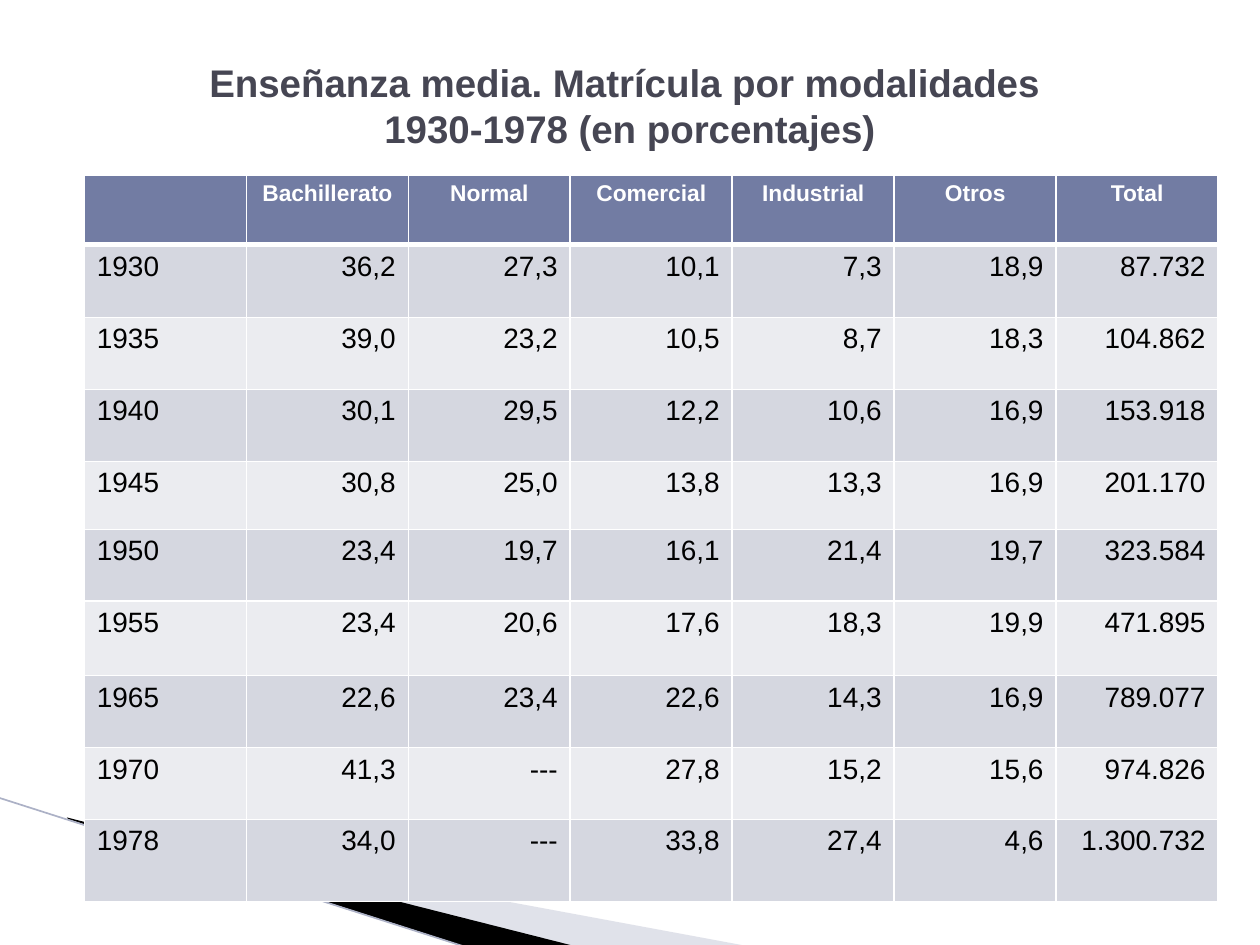
import copy
from dataclasses import dataclass

import pptx
import pptx.dml.color
import pptx.enum.shapes
import pptx.enum.text
import pptx.oxml
import pptx.oxml.ns
import pptx.util
from pptx.util import Cm

ALIGN = pptx.enum.text.PP_ALIGN
qn = pptx.oxml.ns.qn


@dataclass(frozen=True)
class Theme:
    font: str = "Arial"
    title: str = "464653"
    header: str = "727CA3"
    bands: tuple = ("D5D7E0", "EBECF0")
    white: str = "FFFFFF"
    black: str = "000000"
    ribbon: str = "B3B7CB"
    edge: str = "ACB1C6"
    title_size: int = 22
    header_size: int = 13
    body_size: int = 16


T = Theme()

HEADERS = ["", "Bachillerato", "Normal", "Comercial", "Industrial", "Otros", "Total"]
ENROLMENT = [
    ["1930", "36,2", "27,3", "10,1", "7,3", "18,9", "87.732"],
    ["1935", "39,0", "23,2", "10,5", "8,7", "18,3", "104.862"],
    ["1940", "30,1", "29,5", "12,2", "10,6", "16,9", "153.918"],
    ["1945", "30,8", "25,0", "13,8", "13,3", "16,9", "201.170"],
    ["1950", "23,4", "19,7", "16,1", "21,4", "19,7", "323.584"],
    ["1955", "23,4", "20,6", "17,6", "18,3", "19,9", "471.895"],
    ["1965", "22,6", "23,4", "22,6", "14,3", "16,9", "789.077"],
    ["1970", "41,3", "---", "27,8", "15,2", "15,6", "974.826"],
    ["1978", "34,0", "---", "33,8", "27,4", "4,6", "1.300.732"],
]
ROW_HEIGHTS = [1.4, 1.47, 1.45, 1.45, 1.37, 1.45, 1.5, 1.45, 1.45, 1.65]


def rgb(color):
    return pptx.dml.color.RGBColor.from_string(color)


def set_text(tf, text, size, color, bold=False, align=ALIGN.LEFT):
    p = tf.paragraphs[0]
    p.text = text
    p.alignment = align
    for r in p.runs:
        r.font.name = T.font
        r.font.size = pptx.util.Pt(size)
        r.font.bold = bold
        r.font.color.rgb = rgb(color)
    # Line breaks take the size of the text around them
    for br in p._p.findall(qn("a:br")):
        br.append(copy.deepcopy(p.runs[0]._r.rPr))


def add_title(s, text):
    sp = s.shapes.title
    sp.left, sp.top, sp.width, sp.height = Cm(1.27), Cm(1.12), Cm(22.86), Cm(2)
    tf = sp.text_frame
    tf.word_wrap = True
    tf.auto_size = pptx.enum.text.MSO_AUTO_SIZE.NONE
    tf.vertical_anchor = pptx.enum.text.MSO_ANCHOR.MIDDLE
    set_text(tf, text, T.title_size, T.title, bold=True, align=ALIGN.CENTER)


def add_ribbon(s, points, color, opacity=100):
    start, *rest = [(Cm(x), Cm(y)) for x, y in points]
    builder = s.shapes.build_freeform(*start)
    builder.add_line_segments(rest, close=True)
    sp = builder.convert_to_shape()
    sp.shadow.inherit = False
    sp.fill.solid()
    sp.fill.fore_color.rgb = rgb(color)
    sp.line.fill.background()
    if opacity < 100:
        clr = sp.fill._xPr.find(f".//{qn('a:srgbClr')}")
        pptx.oxml.parse_xml(f'<a:alpha {pptx.oxml.ns.nsdecls("a")} val="{opacity * 1000}"/>')
        clr.append(pptx.oxml.parse_xml(
            f'<a:alpha {pptx.oxml.ns.nsdecls("a")} val="{opacity * 1000}"/>'))


def add_line(s, x1, y1, x2, y2, color, width):
    line = s.shapes.add_connector(pptx.enum.shapes.MSO_CONNECTOR.STRAIGHT,
                                  Cm(x1), Cm(y1), Cm(x2), Cm(y2))
    line.line.color.rgb = rgb(color)
    line.line.width = pptx.util.Pt(width)
    line._element.spPr.append(pptx.oxml.parse_xml(
        f'<a:effectLst {pptx.oxml.ns.nsdecls("a")}/>'))


def format_cell(cell, fill, top=1, bottom=1):
    cell.fill.solid()
    cell.fill.fore_color.rgb = rgb(fill)
    tcPr = cell._tc.get_or_add_tcPr()
    # Borders come before the fill in the cell properties
    for i, (side, width) in enumerate(zip("LRTB", (1, 1, top, bottom))):
        tcPr.insert(i, pptx.oxml.parse_xml(
            f'<a:ln{side} {pptx.oxml.ns.nsdecls("a")} w="{pptx.util.Pt(width)}">'
            f'<a:solidFill><a:srgbClr val="{T.white}"/></a:solidFill></a:ln{side}>'))


def add_enrolment_table(s):
    width = Cm(22.86)
    table = s.shapes.add_table(len(ENROLMENT) + 1, len(HEADERS), Cm(1.7), Cm(3.53),
                               width, Cm(sum(ROW_HEIGHTS))).table
    for col in table.columns:
        col.width = width // len(HEADERS)
    for row, height in zip(table.rows, ROW_HEIGHTS):
        row.height = Cm(height)

    # Header row
    for c, label in enumerate(HEADERS):
        cell = table.cell(0, c)
        format_cell(cell, T.header, bottom=3)
        set_text(cell.text_frame, label, T.header_size, T.white, bold=True, align=ALIGN.CENTER)

    # Banded rows, one per year
    for i, values in enumerate(ENROLMENT):
        for c, value in enumerate(values):
            cell = table.cell(i + 1, c)
            format_cell(cell, T.bands[i % 2], top=1 if i else 3)
            set_text(cell.text_frame, value, T.body_size, T.black,
                     align=ALIGN.RIGHT if c else ALIGN.LEFT)


def main():
    prs = pptx.Presentation()
    prs.slide_width, prs.slide_height = Cm(25.4), Cm(19.05)
    s = prs.slides.add_slide(prs.slide_layouts[5])

    # Corner ribbons
    add_ribbon(s, [(1.4, 16.54), (15.11, 19.08), (11.58, 19.08), (1.4, 16.51)],
               T.ribbon, opacity=40)
    add_ribbon(s, [(1.35, 16.48), (11.61, 19.08), (9.45, 19.1), (1.37, 16.51)], T.black)
    add_line(s, -0.03, 16.08, 9.42, 19.1, T.edge, 0.95)

    # Content
    add_enrolment_table(s)
    add_title(s, "Enseñanza media. Matrícula por modalidades \v1930-1978 (en porcentajes)")

    prs.save("out.pptx")


if __name__ == "__main__":
    main()
